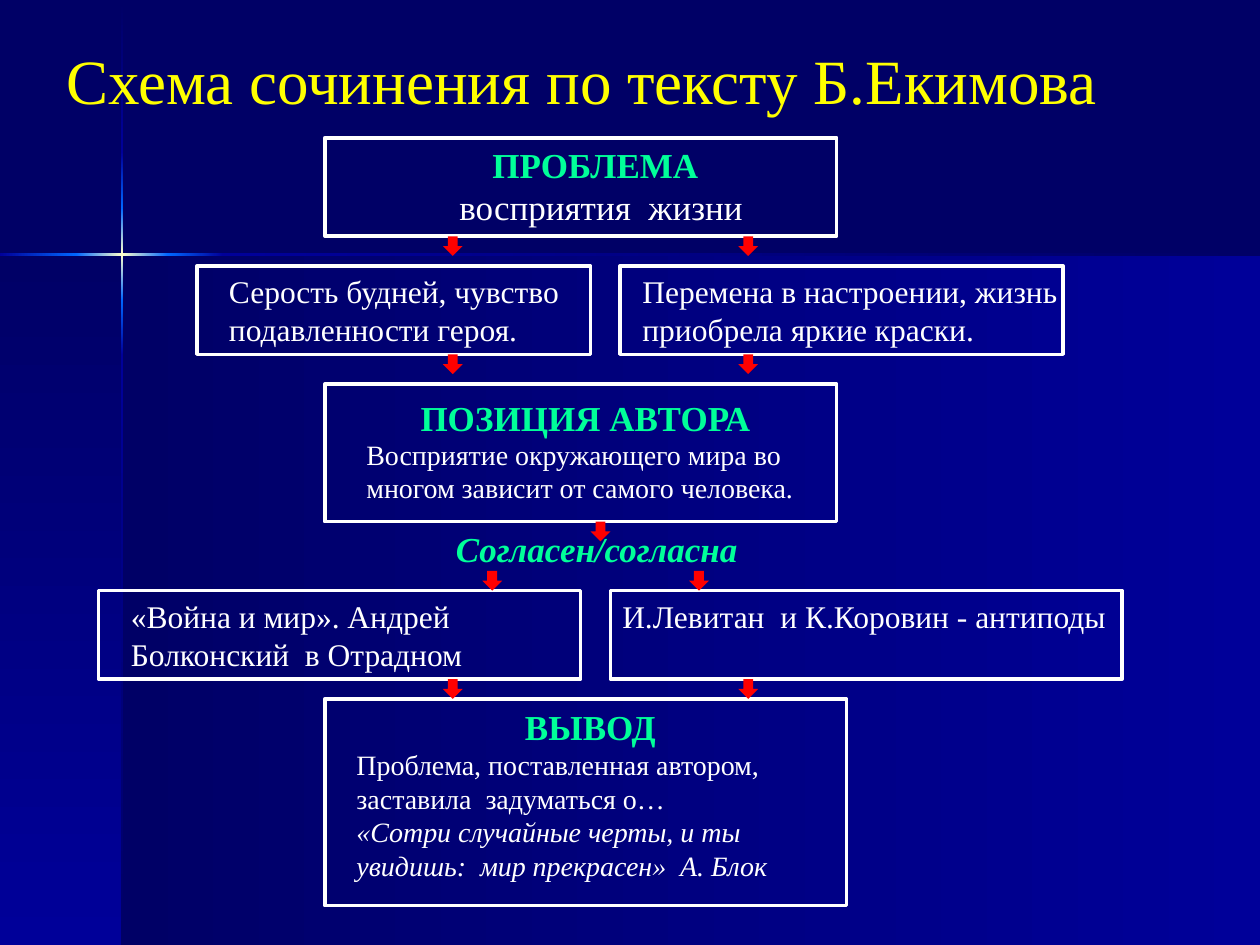
from dataclasses import dataclass
from itertools import pairwise
from lxml import etree
from pptx import Presentation
from pptx import util as u
from pptx.dml.color import RGBColor
from pptx.enum import shapes, text
from pptx.oxml.ns import qn

Pt = u.Pt


@dataclass(frozen=True)
class Theme:
    font: str = "Times New Roman"
    night: str = "000066"
    navy: str = "000099"
    blue: str = "0066FF"
    glow: str = "FFFFCC"
    yellow: str = "FFFF00"
    green: str = "00FF99"
    white: str = "FFFFFF"
    red: str = "FF0000"
    title: int = 36
    heading: int = 20
    body: int = 18
    small: int = 16


theme = Theme()
rgb = RGBColor.from_string

deck = Presentation()
deck.slide_width, deck.slide_height = Pt(720), Pt(540)
page = deck.slides.add_slide(deck.slide_layouts[6])
page.background.fill.solid()
page.background.fill.fore_color.rgb = rgb(theme.night)


def add_block(kind, left, top, width, height):
    block = page.shapes.add_shape(kind, Pt(left), Pt(top), Pt(width), Pt(height))
    block.shadow.inherit = False
    block.fill.background()
    block.line.fill.background()
    return block


def add_gradient(left, top, width, height, colours, angle):
    block = add_block(shapes.MSO_SHAPE.RECTANGLE, left, top, width, height)
    block.fill.gradient()
    gradient = block.fill._xPr.find(qn("a:gradFill"))
    stops = gradient.find(qn("a:gsLst"))
    for stop in list(stops):
        stops.remove(stop)
    for i, colour in enumerate(colours):
        stop = etree.SubElement(stops, qn("a:gs"), pos=str(100000 * i // (len(colours) - 1)))
        etree.SubElement(stop, qn("a:srgbClr"), val=colour)
    gradient.find(qn("a:lin")).set("ang", str(angle * 60000))


# Background panels
CROSS_X, CROSS_Y, BEAM = 69.8, 145.5, 1.44
add_gradient(CROSS_X, CROSS_Y, 720 - CROSS_X, 540 - CROSS_Y, (theme.night, theme.navy), 0)
add_gradient(0, CROSS_Y, CROSS_X, 540 - CROSS_Y, (theme.night, theme.navy), 90)

# Crossing light beams, brightest where they meet
beam_colours = [
    (theme.night, theme.navy),
    (theme.navy, theme.blue),
    (theme.blue, theme.glow, theme.blue),
    (theme.blue, theme.navy),
    (theme.navy, theme.night),
]
for (start, end), colours in zip(pairwise((0.7, 87, 119, 171.5, 203, 540)), beam_colours):
    add_gradient(CROSS_X - BEAM / 2, start, BEAM, end - start, colours, 90)
for (start, end), colours in zip(pairwise((0, 43.5, 96, 127.5, 720)), beam_colours[1:]):
    add_gradient(start, CROSS_Y - BEAM / 2, end - start, BEAM, colours, 0)

# Text styles: size, colour, bold, italic, centred, left indent, space before
styles = {
    "title": (theme.title, theme.yellow, False, False, False, 0, 4),
    "heading": (theme.heading, theme.green, True, False, True, 0, 0),
    "problem": (theme.heading, theme.white, False, False, False, 25, 0),
    "agree": (theme.heading, theme.green, True, True, False, 0, 0),
    "body": (theme.body, theme.white, False, False, False, 0, 0),
    "small": (theme.small, theme.white, False, False, False, 0, 0),
    "quote": (theme.small, theme.white, False, True, False, 0, 0),
}

# Title and captions: left, top, width, height, paragraphs
captions = [
    (31, 20.2, 661, 51, [("title", "Схема сочинения по тексту Б.Екимова")]),
    (230.4, 78.5, 224.6, 55.4, [("heading", "ПРОБЛЕМА "), ("problem", "восприятия  жизни")]),
    (123.8, 152, 208, 51, [("body", "Серость будней, чувство"),
                           ("body", "подавленности героя.")]),
    (360, 152, 253.4, 51, [("body", "Перемена в настроении, жизнь"),
                           ("body", "приобрела яркие краски.")]),
    (196.6, 223.2, 275.8, 53.3, [("heading", "ПОЗИЦИЯ АВТОРА")]),
    (67.7, 337.7, 286.6, 51, [("body", "«Война и мир». Андрей Болконский  в Отрадном")]),
    (348.5, 337.7, 298, 29, [("body", "И.Левитан  и К.Коровин - антиподы")]),
    (196.6, 399.6, 281.5, 108.7, [
        ("heading", "ВЫВОД"),
        ("small", "Проблема, поставленная автором, заставила  задуматься о…"),
        ("quote", "«Сотри случайные черты, и ты увидишь:  мир прекрасен»  А. Блок"),
    ]),
    (253.4, 298, 208, 31.7, [("agree", "Согласен/согласна")]),
    (202.3, 246.2, 264.2, 46,
     [("small", "Восприятие окружающего мира во многом зависит от самого человека.")]),
]
for left, top, width, height, paragraphs in captions:
    box = page.shapes.add_textbox(Pt(left), Pt(top), Pt(width), Pt(height))
    frame = box.text_frame
    frame.word_wrap = True
    frame.auto_size = text.MSO_AUTO_SIZE.SHAPE_TO_FIT_TEXT
    frame.text = "\n".join(words for _, words in paragraphs)
    for para, (style, _) in zip(frame.paragraphs, paragraphs):
        size, colour, bold, italic, centred, indent, before = styles[style]
        para.alignment = text.PP_ALIGN.CENTER if centred else text.PP_ALIGN.LEFT
        para.space_before = Pt(before)
        if indent:
            para._p.get_or_add_pPr().set("marL", str(Pt(indent)))
        for span in para.runs:
            span.font.name, span.font.size = theme.font, Pt(size)
            span.font.bold, span.font.italic = bold, italic
            span.font.color.rgb = rgb(colour)

# Scheme frames: left, top, width, height
frames = [
    (112.5, 152, 225, 50.5),
    (354.4, 152, 253.2, 50.5),
    (185.6, 78.75, 292.5, 56.25),
    (185.6, 219.4, 292.5, 78.75),
    (348.75, 337.5, 292.5, 50.6),
    (56.25, 337.5, 275.6, 50.6),
    (185.6, 399.4, 298.1, 118.1),
]
for place in frames:
    outline = add_block(shapes.MSO_SHAPE.RECTANGLE, *place)
    outline.line.color.rgb = rgb(theme.white)
    outline.line.width = Pt(2)

# Arrows between the rows: top, left edges
ARROW = 11.25
arrow_rows = [
    (135, (253.1, 421.9)),
    (202.5, (253.1, 421.9)),
    (298.1, (337.5,)),
    (326.25, (275.6, 393.75)),
    (388.1, (253.1, 421.9)),
]
for top, lefts in arrow_rows:
    for left in lefts:
        arrow = add_block(shapes.MSO_SHAPE.DOWN_ARROW, left, top, ARROW, ARROW)
        arrow.fill.solid()
        arrow.fill.fore_color.rgb = rgb(theme.red)

deck.save("out.pptx")
